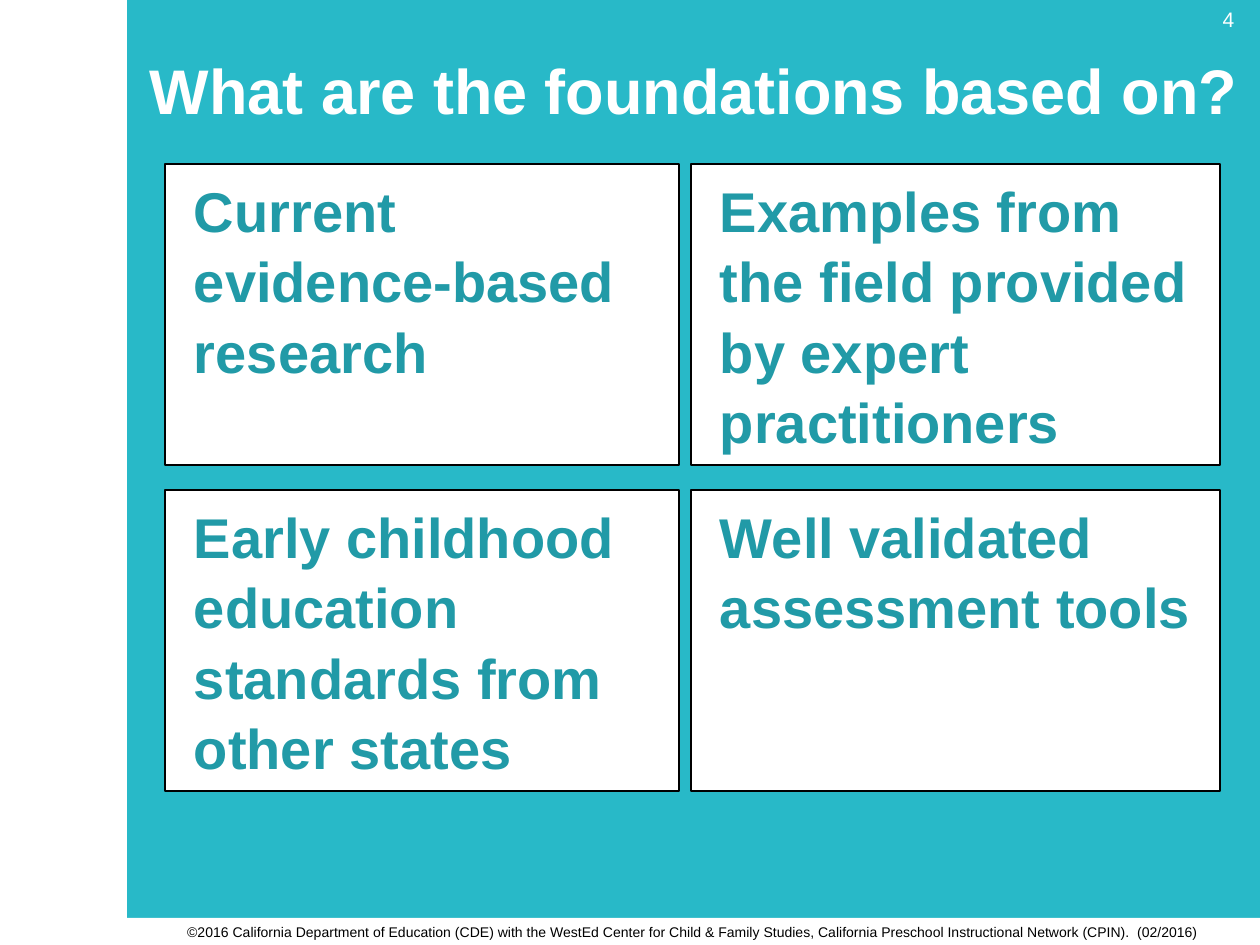
from pptx import Presentation
from pptx.dml.color import RGBColor
from pptx.enum.shapes import MSO_SHAPE as Shape
from pptx.enum.text import MSO_ANCHOR as Anchor, PP_ALIGN as Align
from pptx.util import Emu, Pt

WHITE, BLACK, AQUA, TEAL = "FFFFFF", "000000", "28B9C8", "219AA7"
WIDE, HIGH = 1260, 945
CARDS = [
    ["Current evidence-based research",
     "Examples from the field provided by expert practitioners"],
    ["Early childhood education standards from other states",
     "Well validated assessment tools"],
]


def px(n):
    return Emu(round(n * 914400 / 126))


def paint(color, value):
    color.rgb = RGBColor.from_string(value)


def style(item, **values):
    """Set each named attribute of the item."""
    for name, value in values.items():
        setattr(item, name, value)


def panel(slide, box, edge=None):
    """Add a white rectangle, outlined when an edge colour is given."""
    shape = slide.shapes.add_shape(Shape.RECTANGLE, *map(px, box))
    shape.shadow.inherit = False
    shape.fill.solid()
    paint(shape.fill.fore_color, WHITE)
    if edge:
        shape.line.width = Pt(0.75)
        paint(shape.line.color, edge)
    else:
        shape.line.fill.background()
    return shape


def write(shape, text, size, color, bold=False, align=Align.CENTER,
          space=1.0, **frame):
    base = dict(word_wrap=True, vertical_anchor=Anchor.TOP)
    style(shape.text_frame, **(base | frame))
    para = shape.text_frame.paragraphs[0]
    style(para, text=text, alignment=align, line_spacing=space)
    style(para.font, name="Arial", size=Pt(size), bold=bold)
    paint(para.font.color, color)


def label(slide, box, *args, **values):
    write(slide.shapes.add_textbox(*map(px, box)), *args, **values)


def frame(slide, side, foot):
    """Set the background, the white side strip and the footer."""
    slide.background.fill.solid()
    paint(slide.background.fill.fore_color, AQUA)
    panel(slide, (0, 0, side, HIGH))
    bar = panel(slide, (side, HIGH - foot, WIDE - side, foot))
    write(bar, "©2016 California Department of Education (CDE) with the "
          "WestEd Center for Child & Family Studies, California Preschool "
          "Instructional Network (CPIN).  (02/2016)", 8, BLACK,
          vertical_anchor=Anchor.MIDDLE, margin_top=0, margin_bottom=0)


def grid(slide, box, widths, gaps):
    """Lay the cards out in equal rows and the given column widths."""
    left, top, _, high = box
    across, down = gaps
    tall = (high - down) // 2
    for row, texts in enumerate(CARDS):
        x, y = left, top + row * (tall + down)
        for text, wide in zip(texts, widths):
            card = panel(slide, (x, y, wide, tall), BLACK)
            write(card, text, 32, TEAL, True, Align.LEFT, 1.05,
                  margin_left=px(29), margin_top=px(9))
            x += wide + across


def main():
    deck = Presentation()
    style(deck, slide_width=px(WIDE), slide_height=px(HIGH))
    slide = deck.slides.add_slide(deck.slide_layouts[6])
    frame(slide, 127, 27)
    label(slide, (128, 43, 1132, 157), "What are the foundations based on?",
          36, WHITE, True, margin_top=px(9))
    grid(slide, (165, 164, 1055, 627), (514, 529), (12, 25))
    label(slide, (1197, 0, 63, 50), "4", 12, WHITE)
    deck.save("out.pptx")


if __name__ == "__main__":
    main()
